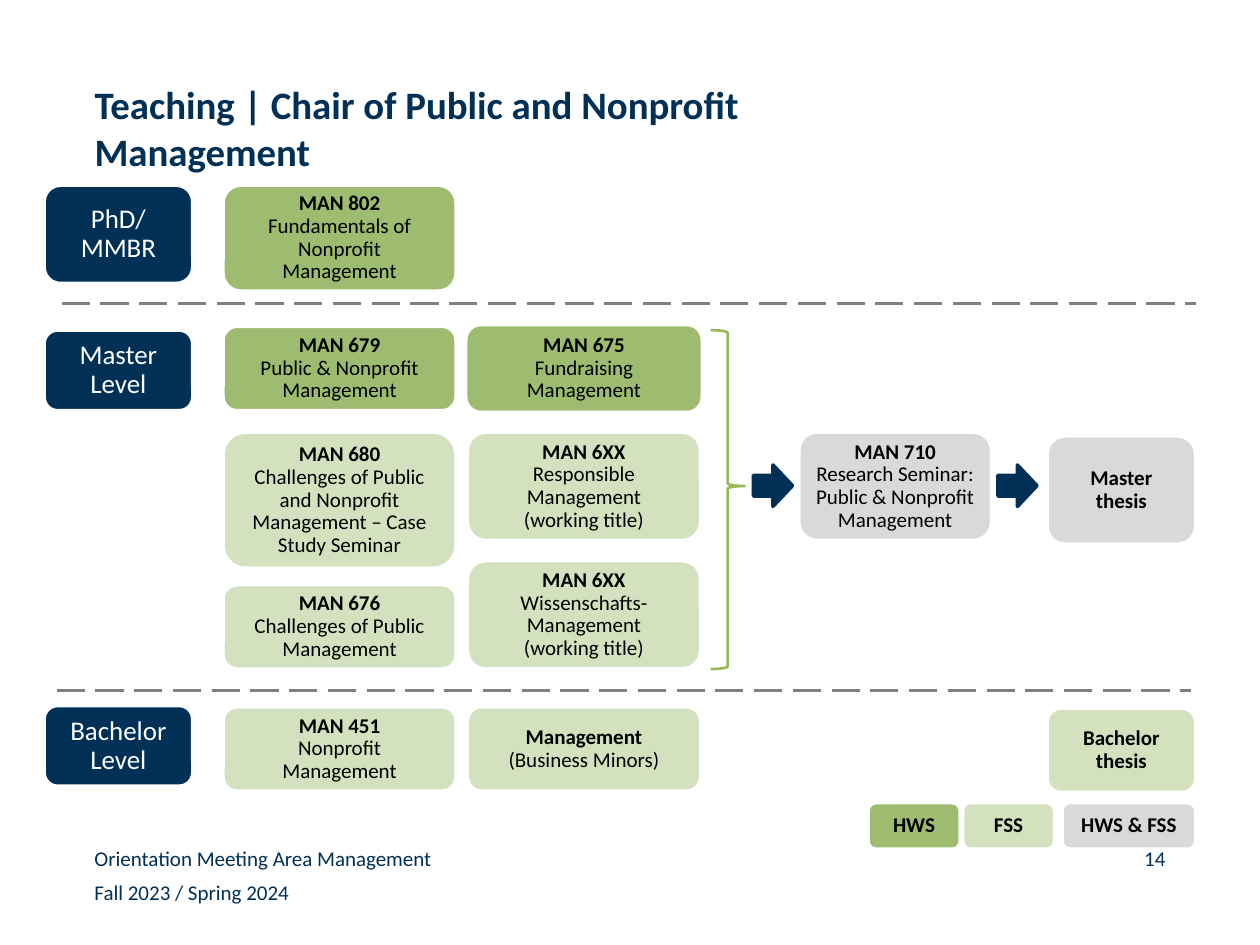
from lxml import etree
from pptx import Presentation
from pptx import util as u
from pptx.dml.color import RGBColor
from pptx.enum import dml, shapes, text
from pptx.oxml.ns import qn

COLORS = {"navy": "003056", "autumn": "9DBC6F", "both": "D9D9D9", "brace": "98B955",
          "rule": "808080", "black": "000000", "white": "FFFFFF"}
FONT = "Calibri"
GRID_COLUMNS, GRID_ROWS = 100, 75

# left and width of each column of boxes, in grid columns
LEVEL, FIRST, SECOND = (3.5, 11.8), (17.7, 18.5), (37.1, 18.5)
SEMINAR, THESIS = (63.4, 15.3), (83.1, 11.8)


def rgb(name):
    return RGBColor.from_string(COLORS[name])


def write(frame, *runs, size=12, color="black", align=text.PP_ALIGN.CENTER,
          anchor=text.MSO_ANCHOR.MIDDLE, inset=0.13, spacing=0.9):
    """Fill a frame with one paragraph; each run is (text, bold) on its own line."""
    frame.word_wrap = True
    frame.auto_size = text.MSO_AUTO_SIZE.NONE
    frame.vertical_anchor = anchor
    frame.margin_left = frame.margin_right = u.Inches(inset)
    frame.margin_top = frame.margin_bottom = u.Inches(inset)
    paragraph = frame.paragraphs[0]
    paragraph.alignment = align
    paragraph.line_spacing = spacing
    for index, (words, bold) in enumerate(runs):
        if index:
            paragraph.add_line_break()
        run = paragraph.add_run()
        run.text = words
        run.font.name = FONT
        run.font.size = u.Pt(size)
        run.font.bold = bold
        run.font.color.rgb = rgb(color)


class Board:
    """Places styled elements on a slide, with lengths in grid columns and rows."""

    def __init__(self, presentation):
        self.column = presentation.slide_width / GRID_COLUMNS
        self.row = presentation.slide_height / GRID_ROWS
        self.slide = presentation.slides.add_slide(presentation.slide_layouts[6])

    def area(self, left, top, width, height):
        return (round(left * self.column), round(top * self.row),
                round(width * self.column), round(height * self.row))

    def preset(self, kind, area, fill=None, line=None, line_width=2, opacity=None):
        shape = self.slide.shapes.add_shape(kind, *self.area(*area))
        shape.shadow.inherit = False
        if fill:
            shape.fill.solid()
            shape.fill.fore_color.rgb = rgb(fill)
        else:
            shape.fill.background()
        if opacity:
            color = shape.fill._xPr.find(qn("a:solidFill"))[0]
            etree.SubElement(color, qn("a:alpha"), val=str(opacity * 1000))
        if line:
            shape.line.color.rgb = rgb(line)
            shape.line.width = u.Pt(line_width)
        else:
            shape.line.fill.background()
        return shape

    def box(self, column, top, height, term, *runs, line="white", **format):
        """A rounded box whose fill shows the term in which the course runs."""
        left, width = column
        fill, opacity = ("autumn", 44) if term == "spring" else (term, None)
        shape = self.preset(shapes.MSO_SHAPE.ROUNDED_RECTANGLE, (left, top, width, height),
                            fill, line, opacity=opacity)
        write(shape.text_frame, *runs, **format)

    def arrow(self, left):
        self.preset(shapes.MSO_SHAPE.RIGHT_ARROW, (left, 36.9, 3.1, 3.3), "navy", "navy")

    def brace(self, *area):
        shape = self.preset(shapes.MSO_SHAPE.RIGHT_BRACE, area, line="brace", line_width=1.5)
        shape.adjustments[0] = 0.08
        shape.adjustments[1] = 0.46

    def separator(self, left, top):
        x, y, width, _ = self.area(left, top, 90, 0)
        line = self.slide.shapes.add_connector(shapes.MSO_CONNECTOR.STRAIGHT, x, y, x + width, y)
        line.line.color.rgb = rgb("rule")
        line.line.width = u.Pt(2)
        line.line.dash_style = dml.MSO_LINE.LONG_DASH
        etree.SubElement(line._element.spPr, qn("a:effectLst"))

    def label(self, area, words, size=12, bold=False, align=text.PP_ALIGN.LEFT):
        frame = self.slide.shapes.add_textbox(*self.area(*area)).text_frame
        write(frame, (words, bold), size=size, color="navy", align=align,
              anchor=text.MSO_ANCHOR.TOP, inset=0, spacing=1)


LEVELS = [  # top, height, lines
    (14.7, 7.8, ["PhD/ MMBR"]),
    (26.2, 6.4, ["Master", "Level"]),
    (56, 6.4, ["Bachelor Level"]),
]
COURSES = [  # column, top, height, term, code, title
    (FIRST, 14.7, 8.4, "autumn", "MAN 802", "Fundamentals of Nonprofit Management"),
    (FIRST, 25.9, 6.7, "autumn", "MAN 679", "Public & Nonprofit Management"),
    (FIRST, 34.3, 10.8, "spring", "MAN 680",
     "Challenges of Public and Nonprofit Management – Case Study Seminar"),
    (FIRST, 46.4, 6.7, "spring", "MAN 676", "Challenges of Public Management"),
    (FIRST, 56.1, 6.7, "spring", "MAN 451", "Nonprofit Management"),
    (SECOND, 34.3, 8.6, "spring", "MAN 6XX", "Responsible Management (working title)"),
    (SECOND, 44.5, 8.6, "spring", "MAN 6XX", "Wissenschafts-Management (working title)"),
    (SECOND, 56.1, 6.7, "spring", "Management", "(Business Minors)"),
]
BOLD_BOXES = [  # theses, then the legend
    (THESIS, 34.6, 8.6, "both", "Master thesis"),
    (THESIS, 56.2, 6.7, "spring", "Bachelor thesis"),
    ((68.9, 7.3), 63.7, 3.7, "autumn", "HWS"),
    ((76.4, 7.3), 63.7, 3.7, "spring", "FSS"),
    ((84.3, 10.6), 63.7, 3.7, "both", "HWS & FSS"),
]


def main():
    presentation = Presentation()
    presentation.slide_width = u.Inches(10)
    presentation.slide_height = u.Inches(7.5)
    board = Board(presentation)

    board.label((7.5, 6.4, 59.9, 12.5), "Teaching | Chair of Public and Nonprofit Management",
                size=22.2, bold=True)
    board.separator(4.9, 24.1)
    board.separator(4.5, 54.8)
    for top, height, lines in LEVELS:
        board.box(LEVEL, top, height, "navy", *[(line, False) for line in lines],
                  size=15.4, color="white")
    for column, top, height, term, code, title in COURSES:
        board.box(column, top, height, term, (code, True), (title, False))
    board.box(SECOND, 25.9, 6.7, "autumn", ("MAN 675", True),
              ("Fundraising Management", False), line=None)
    board.box(SEMINAR, 34.3, 8.6, "both", ("MAN 710", True),
              ("Research Seminar: Public & Nonprofit Management", False), inset=0.09)
    for column, top, height, term, words in BOLD_BOXES:
        board.box(column, top, height, term, (words, True))
    board.brace(56.4, 26.2, 2.7, 26.9)
    board.arrow(59.8)
    board.arrow(79.2)
    board.label((7.5, 67.1, 31.7, 2), "Orientation Meeting Area Management")
    board.label((7.5, 69.8, 23.3, 2), "Fall 2023 / Spring 2024")
    board.label((81, 67.1, 11.5, 2), "14", align=text.PP_ALIGN.RIGHT)
    presentation.save("out.pptx")


if __name__ == "__main__":
    main()
